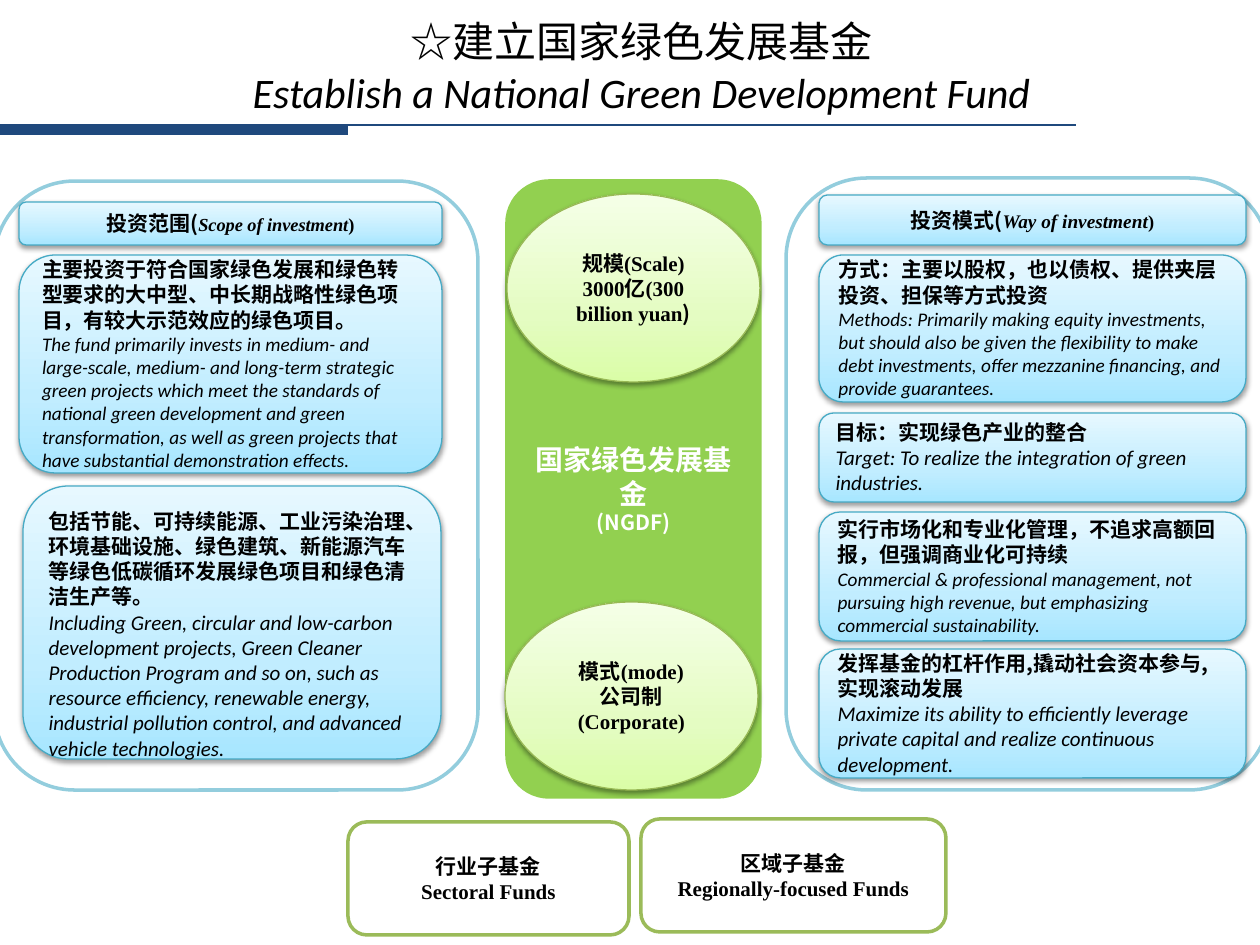
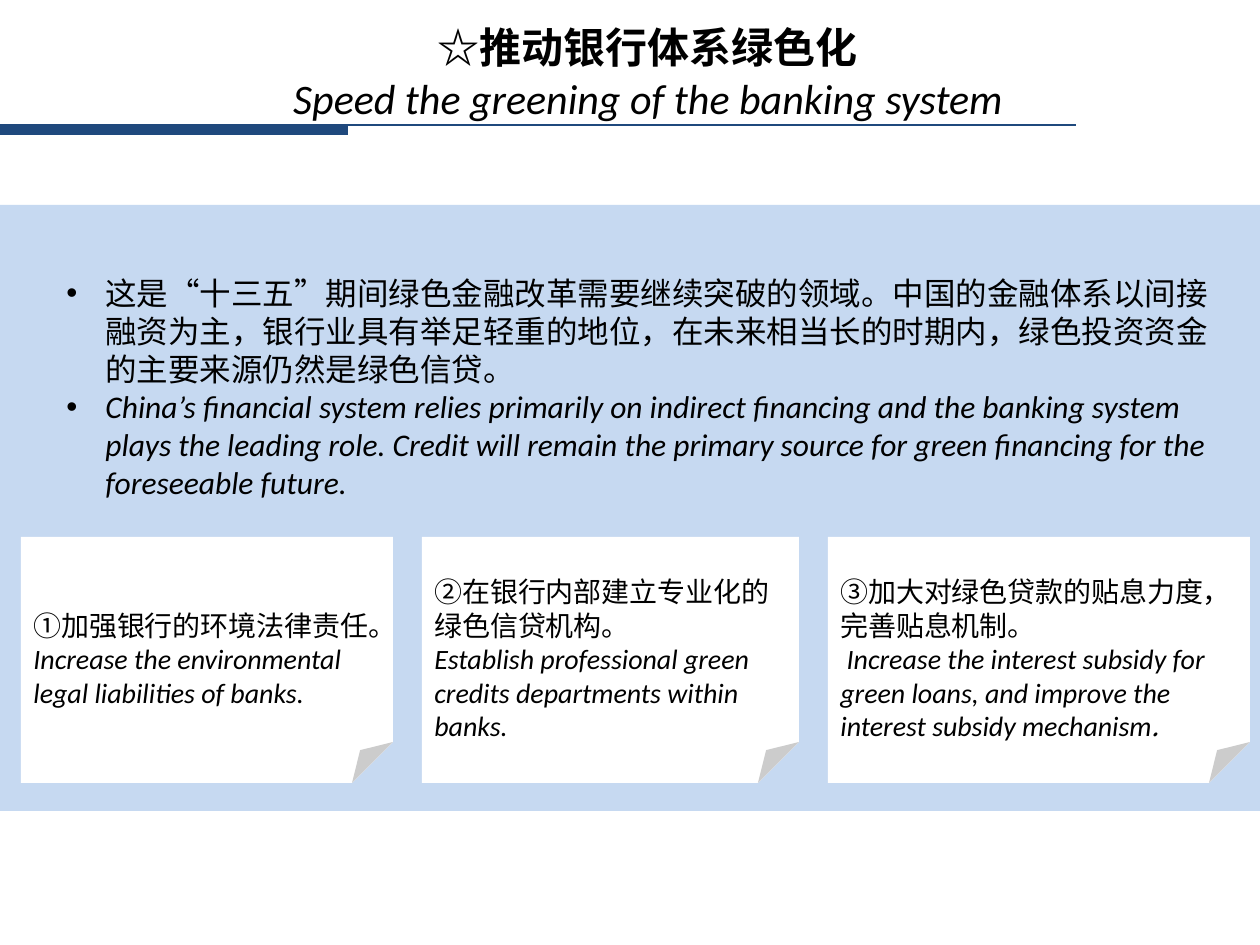
"""Two slides on a national green fund and greener banking."""
from lxml import etree
from pptx import Presentation, util as u
from pptx.dml.color import RGBColor
from pptx.enum import shapes, text
from pptx.oxml.ns import qn

PX = 914400 / 126
HUE = {
    "navy": "1F497D", "green": "92D050", "moss": "9BBB59", "leaf": "98B955",
    "sky": "93CDDD", "teal": "46AAC5", "pale": "C6D9F1", "fold": "FFFFFF",
    "white": "FFFFFF", "black": "000000",
}
FADE = {
    "lime": ("DAFDA7", "E4FCC2", "F5FFE7"),
    "aqua": ("A7E6FF", "C1EDFF", "E7F8FF"),
}
FACE = {"s": "Noto Sans CJK SC", "t": "Times New Roman", "c": "Calibri"}
KIND = shapes.MSO_SHAPE
MID = text.PP_ALIGN.CENTER
LEFT = text.PP_ALIGN.LEFT


def write(box, paras, align, ink="black", top=6, dot=False):
    """Fill a box; a style is a face letter followed by b and i flags."""
    frame = box.text_frame
    frame.word_wrap = True
    frame.margin_top = int(top * PX)
    for n, runs in enumerate(paras):
        para = frame.paragraphs[0] if n == 0 else frame.add_paragraph()
        para.alignment = align
        if dot:
            prop = para._p.get_or_add_pPr()
            prop.set("marL", str(int(39 * PX)))
            prop.set("indent", str(int(-39 * PX)))
            etree.SubElement(prop, qn("a:buFont")).set("typeface", "Arial")
            etree.SubElement(prop, qn("a:buChar")).set("char", "•")
        runs = runs if isinstance(runs, list) else [runs]
        for words, size, style in runs:
            run = para.add_run()
            run.text = words
            font = para.font if len(runs) == 1 else run.font
            font.size = u.Pt(size)
            font.bold = "b" in style[1:]
            font.italic = "i" in style[1:]
            font.color.rgb = RGBColor.from_string(HUE[ink])
            font.name = FACE[style[0]]
    for latin in list(box._element.iter(qn("a:latin"))):
        east = etree.Element(qn("a:ea"))
        east.set("typeface", FACE["s"])
        latin.addnext(east)


def draw(page, kind, at, fill=None, edge=None, width=2.0):
    """Add a shape placed in px, with a plain or faded fill."""
    item = page.shapes.add_shape(kind, *[int(n * PX) for n in at])
    item.shadow.inherit = False
    item.text_frame.vertical_anchor = text.MSO_ANCHOR.MIDDLE
    if edge:
        item.line.color.rgb = RGBColor.from_string(HUE[edge])
        item.line.width = u.Pt(width)
    else:
        item.line.fill.background()
    if fill in FADE:
        item.fill.gradient()
        item.fill.gradient_angle = 90
        stops = item._element.spPr.find(".//" + qn("a:gsLst"))
        for old in list(stops):
            stops.remove(old)
        for pos, tone in zip((0, 35000, 100000), FADE[fill]):
            stop = etree.SubElement(stops, qn("a:gs"), pos=str(pos))
            etree.SubElement(stop, qn("a:srgbClr"), val=tone)
        glow = item._element.spPr.find(qn("a:effectLst"))
        cast = etree.SubElement(glow, qn("a:outerShdw"), blurRad="39370",
                                dist="20320", dir="5400000", rotWithShape="0")
        tint = etree.SubElement(cast, qn("a:srgbClr"), val=HUE["black"])
        etree.SubElement(tint, qn("a:alpha"), val="38000")
    elif fill:
        item.fill.solid()
        item.fill.fore_color.rgb = RGBColor.from_string(HUE[fill])
    else:
        item.fill.background()
    return item


deck = Presentation()
deck.slide_width, deck.slide_height = u.Inches(10), u.Inches(7.5)

titles = [
    ((174, 10, 935, 115), "☆建立国家绿色发展基金", "s",
     "Establish a National Green Development Fund"),
    ((258, 16, 780, 115), "☆推动银行体系绿色化", "sb",
     "Speed the greening of the banking system"),
]
pages = []
for at, head, style, sub in titles:
    page = deck.slides.add_slide(deck.slide_layouts[6])
    rule = page.shapes.add_connector(
        shapes.MSO_CONNECTOR.STRAIGHT,
        *[int(n * PX) for n in (0, 125, 1076, 125)])
    rule.line.color.rgb = RGBColor.from_string(HUE["navy"])
    rule.line.width = u.Pt(1.5)
    etree.SubElement(rule._element.spPr, qn("a:effectLst"))
    draw(page, KIND.RECTANGLE, (0, 125, 348, 10), "navy")
    box = page.shapes.add_textbox(*[int(n * PX) for n in at])
    write(box, [(head, 24, style), (sub, 24, "ci")], MID)
    pages.append(page)
fund, bank = pages

bar = draw(fund, KIND.ROUNDED_RECTANGLE, (507, 181, 253, 616), "green", "green")
write(bar, [("国家绿色发展基金", 16, "tb"), ("(NGDF)", 12, "sb")], MID, "white")

for at in ((-6, 181, 484, 609), (786, 178, 484, 612)):
    draw(fund, KIND.ROUNDED_RECTANGLE, at, None, "sky")

subs = [
    ((348, 822, 281, 113), "行业子基金", "Sectoral Funds"),
    ((641, 819, 305, 113), "区域子基金", "Regionally-focused Funds"),
]
for at, name, gloss in subs:
    box = draw(fund, KIND.ROUNDED_RECTANGLE, at, "white", "moss")
    write(box, [(name, 12, "tb"), (gloss, 12, "tb")], MID)

ovals = [
    ((507, 194, 253, 188), [
        ("规模(Scale)", 12, "tb"),
        [("3000亿(300 billion yuan", 12, "tb"), (")", 12, "sb")]]),
    ((505, 602, 253, 188), [
        ("模式(mode)", 12, "tb"), ("公司制(Corporate)", 12, "tb")]),
]
for at, paras in ovals:
    write(draw(fund, KIND.OVAL, at, "lime", "leaf", 0.75), paras, MID)

heads = [
    ((19, 202, 423, 43), [
        ("投资范围(", 12, "sb"), ("Scope of investment", 10.5, "tbi"),
        (")", 10.5, "tb")]),
    ((819, 195, 427, 50), [
        ("投资模式", 12, "tb"), ("(", 12, "sb"),
        ("Way of investment", 11, "tbi"), (")", 10.5, "tb")]),
]
for at, runs in heads:
    box = draw(fund, KIND.ROUNDED_RECTANGLE, at, "aqua", "teal", 0.75)
    write(box, [runs], MID)

notes = [
    ((19, 255, 423, 218), 6, 11,
     "主要投资于符合国家绿色发展和绿色转型要求的大中型、中长期战略性绿色项目，"
     "有较大示范效应的绿色项目。",
     "The fund primarily invests in medium- and large-scale, medium- and "
     "long-term strategic green projects which meet the standards of national "
     "green development and green transformation, as well as green projects "
     "that have substantial demonstration effects."),
    ((23, 486, 418, 273), 30, 12,
     "包括节能、可持续能源、工业污染治理、环境基础设施、绿色建筑、新能源汽车等"
     "绿色低碳循环发展绿色项目和绿色清洁生产等。",
     "Including Green, circular and low-carbon development projects, Green "
     "Cleaner Production Program and so on, such as resource efficiency, "
     "renewable energy, industrial pollution control, and advanced vehicle "
     "technologies."),
    ((819, 255, 427, 147), 6, 11,
     "方式：主要以股权，也以债权、提供夹层投资、担保等方式投资",
     "Methods: Primarily making equity investments, but should also be given "
     "the flexibility to make debt investments, offer mezzanine financing, "
     "and provide guarantees."),
    ((819, 413, 427, 89), 6, 12,
     "目标：实现绿色产业的整合",
     "Target: To realize the integration of green industries."),
    ((819, 512, 427, 129), 6, 11,
     "实行市场化和专业化管理，不追求高额回报，但强调商业化可持续",
     "Commercial & professional management, not pursuing high revenue, but "
     "emphasizing commercial sustainability."),
    ((819, 649, 427, 129), 6, 12,
     "发挥基金的杠杆作用,撬动社会资本参与,实现滚动发展",
     "Maximize its ability to efficiently leverage private capital and "
     "realize continuous development."),
]
for at, top, size, main, gloss in notes:
    box = draw(fund, KIND.ROUNDED_RECTANGLE, at, "aqua", "teal", 0.75)
    write(box, [(main, 12, "sb"), (gloss, size, "ci")], LEFT, top=top)

draw(bank, KIND.RECTANGLE, (0, 205, 1260, 606), "pale")
lead = bank.shapes.add_textbox(*[int(n * PX) for n in (54, 268, 1181, 242)])
write(lead, [
    ("这是“十三五”期间绿色金融改革需要继续突破的领域。中国的金融体系以间接融资为主，"
     "银行业具有举足轻重的地位，在未来相当长的时期内，绿色投资资金的主要来源仍然是"
     "绿色信贷。", 18, "s"),
    ("China’s financial system relies primarily on indirect financing and the "
     "banking system plays the leading role. Credit will remain the primary "
     "source for green financing for the foreseeable future.", 18, "ci"),
], LEFT, dot=True)

cards = [
    (21, 372, "①加强银行的环境法律责任。",
     [("Increase the environmental legal liabilities of banks.", 16, "ci")]),
    (422, 377, "②在银行内部建立专业化的绿色信贷机构。",
     [("Establish professional green credits departments within banks.",
       16, "ci")]),
    (828, 422, "③加大对绿色贷款的贴息力度，完善贴息机制。",
     [(" Increase the interest subsidy for green loans, and improve the "
       "interest subsidy mechanism", 16, "ci"), (".", 16, "si")]),
]
for left, wide, main, gloss in cards:
    card = draw(bank, KIND.FOLDED_CORNER, (left, 537, wide, 246), "fold")
    write(card, [(main, 16, "s"), gloss], LEFT, top=44)

deck.save("out.pptx")
